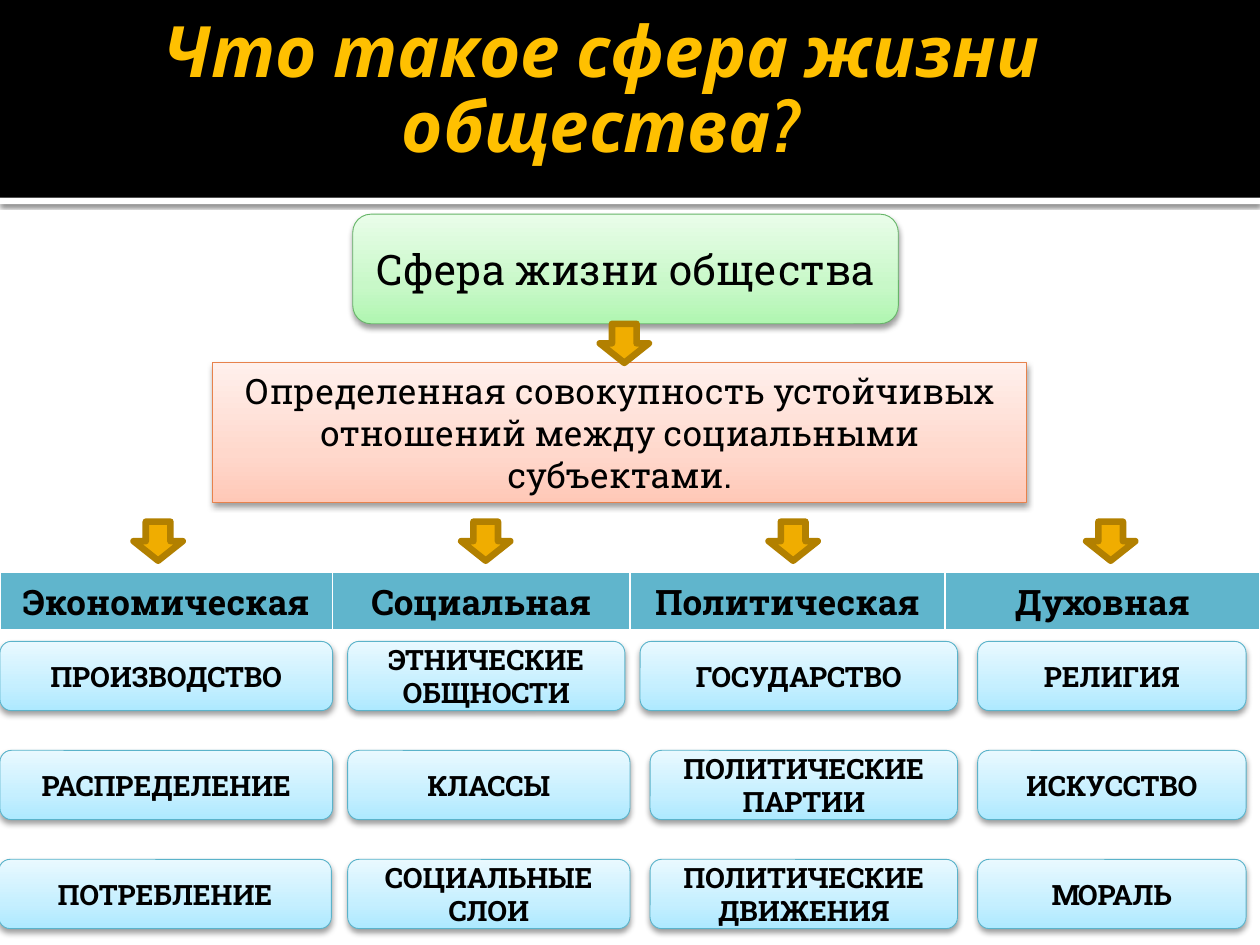
from copy import deepcopy

from lxml.etree import SubElement as Sub
from pptx import Presentation
from pptx.dml.color import RGBColor as Rgb
from pptx.enum.shapes import MSO_SHAPE as Geo
from pptx.enum.text import MSO_ANCHOR as Anchor, MSO_AUTO_SIZE as Auto, PP_ALIGN as Align
from pptx.oxml.ns import qn
from pptx.util import Inches, Pt

BLACK = Rgb(0x00, 0x00, 0x00)
WHITE = Rgb(0xFF, 0xFF, 0xFF)
GOLD = Rgb(0xFF, 0xC0, 0x00)
AMBER = Rgb(0xF0, 0xAD, 0x00)
BROWN = Rgb(0xB2, 0x80, 0x00)
TEAL = Rgb(0x60, 0xB5, 0xCC)

# Each tone: gradient from bottom to top, then outline
GREEN = (Rgb(0xB0, 0xF6, 0xB1), Rgb(0xC8, 0xF8, 0xC8), Rgb(0xE9, 0xFD, 0xE9), Rgb(0x67, 0xB5, 0x69))
CORAL = (Rgb(0xFF, 0xC8, 0xB7), Rgb(0xFF, 0xD8, 0xCC), Rgb(0xFF, 0xF0, 0xEC), Rgb(0xE7, 0x82, 0x4C))
BLUE = (Rgb(0xAD, 0xE9, 0xFF), Rgb(0xC5, 0xEF, 0xFF), Rgb(0xE9, 0xF9, 0xFF), Rgb(0x5B, 0xB3, 0xCA))
STOPS = (0, 0.35, 1)

# Spheres: name, column width, arrow left, then (left, width, text) of each item
SPHERES = [
    ("Экономическая", 26.4, 10.6, [
        (0, 26.4, "ПРОИЗВОДСТВО"), (0, 26.4, "РАСПРЕДЕЛЕНИЕ"), (-0.1, 26.4, "ПОТРЕБЛЕНИЕ")]),
    ("Социальная", 23.6, 36.6, [
        (27.6, 22, "ЭТНИЧЕСКИЕ ОБЩНОСТИ"), (27.6, 22.4, "КЛАССЫ"), (27.6, 22.4, "СОЦИАЛЬНЫЕ СЛОИ")]),
    ("Политическая", 25, 61, [
        (50.8, 25.2, "ГОСУДАРСТВО"), (51.6, 24.4, "ПОЛИТИЧЕСКИЕ ПАРТИИ"),
        (51.6, 24.4, "ПОЛИТИЧЕСКИЕ ДВИЖЕНИЯ")]),
    ("Духовная", 25, 86.2, [
        (77.6, 21.3, "РЕЛИГИЯ"), (77.6, 21.3, "ИСКУССТВО"), (77.6, 21.3, "МОРАЛЬ")]),
]


class Board:
    """Draws on a grid of 100 columns by 75 rows."""
    head, body = "Cabin", "Roboto Slab"

    def __init__(self, deck):
        self.slide = deck.slides.add_slide(deck.slide_layouts[5])
        self.cell = deck.slide_width / 100

    def grid(self, *nums):
        return [round(n * self.cell) for n in nums]

    def label(self, frame, text, size, bold=False, font=None, color=BLACK):
        frame.text = text
        frame.word_wrap = True
        para = frame.paragraphs[0]
        para.alignment = Align.CENTER
        para.font.name = font or self.body
        para.font.size, para.font.bold = Pt(size), bold
        para.font.color.rgb = color
        return para

    def shape(self, kind, area, fill=None, line=None, width=0.5):
        item = self.slide.shapes.add_shape(kind, *self.grid(*area))
        item.shadow.inherit = False
        if fill is not None:
            item.fill.solid()
            item.fill.fore_color.rgb = fill
        if line is None:
            item.line.fill.background()
        else:
            item.line.color.rgb = line
            item.line.width = Pt(width)
        return item

    def shade(self, item, alpha, blur, dist):
        effects = item.element.spPr.find(qn("a:effectLst"))
        outer = Sub(effects, qn("a:outerShdw"), blurRad=str(Pt(blur)), dist=str(Pt(dist)),
                    dir="5400000", rotWithShape="0")
        color = Sub(outer, qn("a:srgbClr"), val=str(BLACK))
        Sub(color, qn("a:alpha"), val=str(alpha * 1000))

    def box(self, kind, area, tone, text, size, bold=False, anchor=Anchor.MIDDLE):
        item = self.shape(kind, area, line=tone[3])
        item.fill.gradient()
        item.fill.gradient_angle = 90
        stops = item.element.spPr.find(".//" + qn("a:gsLst"))
        stops.append(deepcopy(stops[-1]))
        for stop, spot, color in zip(item.fill.gradient_stops, STOPS, tone):
            stop.position, stop.color.rgb = spot, color
        self.shade(item, 38, 3.5, 2)
        self.label(item.text_frame, text, size, bold)
        item.text_frame.vertical_anchor = anchor

    def arrow(self, left, top):
        self.shape(Geo.DOWN_ARROW, (left, top, 3.9, 3.1), AMBER, BROWN, 3.78)

    def title(self, area, text):
        item = self.slide.shapes.title
        item.left, item.top, item.width, item.height = self.grid(*area)
        frame = item.text_frame
        para = self.label(frame, text, 40.5, True, self.head, GOLD)
        para.font.italic, para.line_spacing = True, 0.88
        frame.auto_size, frame.vertical_anchor = Auto.NONE, Anchor.MIDDLE
        frame.margin_right = Inches(0.05)
        self.slide.shapes.element.append(item.element)  # in front of the band

    def table(self, area, names, widths):
        table = self.slide.shapes.add_table(1, len(names), *self.grid(*area)).table
        for col, width in zip(table.columns, self.grid(*widths)):
            col.width = width
        for cell, name in zip(table.rows[0].cells, names):
            self.label(cell.text_frame, name, 20, True)
            for side, width in (("L", 1), ("R", 1), ("T", 1), ("B", 3)):
                edge = Sub(cell._tc.get_or_add_tcPr(), qn("a:ln" + side), w=str(Pt(width)))
                Sub(Sub(edge, qn("a:solidFill")), qn("a:srgbClr"), val=str(WHITE))
            cell.fill.solid()
            cell.fill.fore_color.rgb = TEAL


def main():
    deck = Presentation()
    deck.slide_width, deck.slide_height = Inches(10), Inches(7.5)
    board = Board(deck)

    # Header band
    strip = board.shape(Geo.RECTANGLE, (0, 15.7, 100, 0.5), WHITE)
    board.shade(strip, 60, 2.5, 0.8)
    board.shape(Geo.RECTANGLE, (0, 0, 100, 15.7), BLACK)
    board.title((2.5, 2.1, 90, 10.5), "Что такое сфера жизни общества?")

    # Term and definition
    board.box(Geo.RECTANGLE, (16.9, 28.8, 64.6, 11.1), CORAL,
              "Определенная совокупность устойчивых отношений между социальными субъектами.",
              20, anchor=Anchor.TOP)
    board.box(Geo.ROUNDED_RECTANGLE, (28, 17, 43.3, 8.7), GREEN, "Сфера жизни общества", 24)
    board.arrow(47.6, 25.7)

    # Spheres and their items
    names, widths, arrows, lists = zip(*SPHERES)
    board.table((0, 45.4, 100, 4.1), names, widths)
    for left, items in zip(arrows, lists):
        board.arrow(left, 41.4)
        for row, (start, width, text) in enumerate(items):
            area = (start, 50.9 + row * 8.65, width, 5.5)
            board.box(Geo.ROUNDED_RECTANGLE, area, BLUE, text, 16, True)

    deck.save("out.pptx")


if __name__ == "__main__":
    main()
